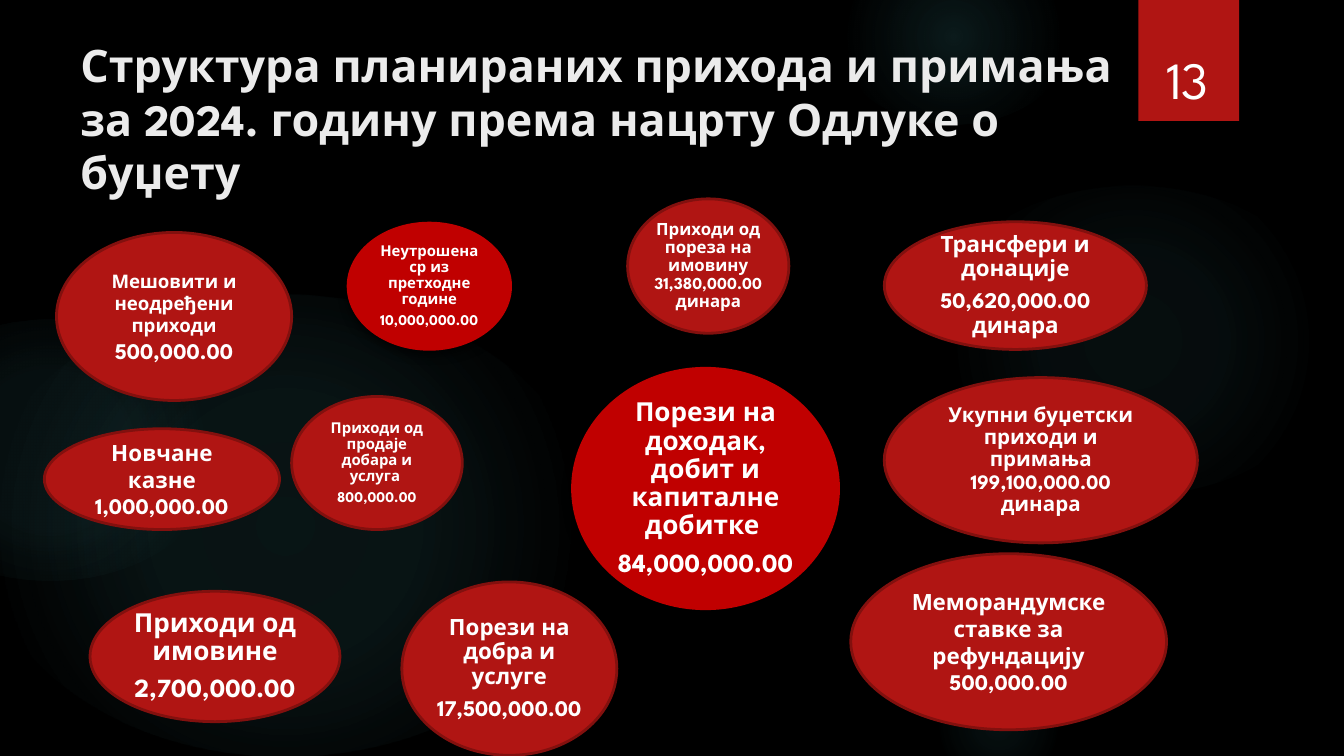
from pptx import Presentation
from pptx.dml.color import RGBColor
from pptx.enum import shapes, text
from pptx.oxml import parse_xml
from pptx.oxml.ns import nsdecls
from pptx.util import Inches, Pt

FONT = "League Spartan"
BLACK = RGBColor(0x00, 0x00, 0x00)
WHITE = RGBColor(0xFF, 0xFF, 0xFF)
PALE = RGBColor(0xEB, 0xEB, 0xEB)
RED = RGBColor(0xB0, 0x15, 0x13)
BRIGHT = RGBColor(0xC0, 0x00, 0x00)
DARK = RGBColor(0x82, 0x10, 0x0E)
TEAL = RGBColor(0x50, 0xB9, 0xC1)

GLOWS = [
    ((6.89, 1.38, 3.08, 2.31), ((0, 7), (36, 6), (69, 0))),
    ((6.22, -0.38, 1.75, 1.31), ((0, 14), (36, 7), (73, 0))),
    ((6.89, 5, 1.08, 0.81), ((0, 9), (36, 5), (66, 0))),
    ((-0.17, 2.19, 4.58, 3.44), ((0, 11), (36, 10), (75, 0))),
    ((-0.92, 2.38, 2.58, 1.94), ((0, 8), (36, 8), (72, 0))),
]

TIGHT = [
    ((6.58, 2.81, 2.33, 1.23), 11, RED,
     ["Укупни буџетски приходи и примања 199,100,000.00 динара"]),
    ((4.67, 1.48, 1.2, 1), 9, RED,
     ["Приходи од пореза на имовину 31,380,000.00 динара"]),
    ((6.58, 1.65, 1.95, 0.95), 12, RED,
     ["Трансфери и донације", "50,620,000.00 динара"]),
    ((2.99, 4.33, 1.6, 1.29), 12, RED,
     ["Порези на добра и услуге", "17,500,000.00"]),
    ((2.17, 2.95, 1.27, 0.99), 8, RED,
     ["Приходи од продаје добара и услуга ", "800,000.00"]),
    ((0.67, 4.4, 1.86, 0.97), 14, RED,
     ["Приходи од имовине", "2,700,000.00"]),
    ((4.25, 2.73, 2, 1.81), 14, BRIGHT,
     ["Порези на доходак, добит и капиталне добитке ", "84,000,000.00"]),
    ((2.58, 1.65, 1.23, 0.96), 8, BRIGHT,
     ["Неутрошена ср из претходне године", "10,000,000.00"]),
]

LOOSE = [
    ((6.33, 4.12, 2.35, 1.31), 12,
     ["Меморандумске\vставке за рефундацију 500,000.00"]),
    ((0.33, 3.19, 1.75, 0.75), 12, ["Новчане казне", "1,000,000.00"]),
    ((0.42, 1.73, 1.75, 1.25), 10, ["Мешовити и неодређени приходи "]),
]


def style(run, size, color=WHITE, bold=True):
    """Set the font of a run."""
    run.font.name, run.font.size, run.font.bold = FONT, Pt(size), bold
    run.font.color.rgb = color


def solid(slide, kind, box, fill, line=None):
    """Add a filled shape without a shadow."""
    shape = slide.shapes.add_shape(kind, *map(Inches, box))
    shape.shadow.inherit = False
    shape.fill.solid()
    shape.fill.fore_color.rgb = fill
    if line is None:
        shape.line.fill.background()
    else:
        shape.line.color.rgb = line
        shape.line.width = Pt(1.5)
    return shape


def shade(shape, alpha, blur, dist):
    """Cast a soft black shadow below a shape."""
    effects = shape._element.spPr.find("{*}effectLst")
    effects.append(parse_xml(
        f'<a:outerShdw {nsdecls("a")} blurRad="{Pt(blur)}" dist="{Pt(dist)}" '
        f'dir="5400000" rotWithShape="0"><a:srgbClr val="{BLACK}">'
        f'<a:alpha val="{alpha * 1000}"/></a:srgbClr></a:outerShdw>'))


def glow(slide, box, stops):
    """Add an ellipse that fades out from its centre."""
    shape = solid(slide, shapes.MSO_SHAPE.OVAL, box, TEAL)
    marks = "".join(
        f'<a:gs pos="{pos * 1000}"><a:srgbClr val="{TEAL}">'
        f'<a:alpha val="{alpha * 1000}"/></a:srgbClr></a:gs>'
        for pos, alpha in stops)
    fade = parse_xml(
        f'<a:gradFill {nsdecls("a")} rotWithShape="1"><a:gsLst>{marks}</a:gsLst>'
        '<a:path path="circle"><a:fillToRect l="50000" t="50000" r="50000" '
        'b="50000"/></a:path></a:gradFill>')
    props = shape._element.spPr
    props.replace(props.find("{*}solidFill"), fade)


def label(slide, box, words, size, color, bold):
    """Add a wrapped text box."""
    frame = slide.shapes.add_textbox(*map(Inches, box)).text_frame
    frame.word_wrap = True
    frame.text = words
    for run in frame.paragraphs[0].runs:
        style(run, size, color, bold)
    return frame


def header(slide):
    """Place the title and the page tab."""
    tab = solid(slide, shapes.MSO_SHAPE.RECTANGLE, (8.47, 0, 0.75, 0.9), RED)
    shade(tab, 45, 3, 2)
    label(slide, (0.5, 0.23, 9, 0.64),
          "Структура планираних прихода и примања\v"
          "за 2024. годину према нацрту Одлуке о\vбуџету", 24, PALE, True)
    page = label(slide, (8.49, 0.24, 0.69, 0.63), "13", 28, WHITE, False)
    page.vertical_anchor = text.MSO_ANCHOR.BOTTOM
    page.paragraphs[0].alignment = text.PP_ALIGN.CENTER


def bubble(slide, box, size, lines, fill=RED, tight=False):
    """Add an ellipse with centred text."""
    shape = solid(slide, shapes.MSO_SHAPE.OVAL, box, fill,
                  DARK if fill == RED else None)
    if fill == BRIGHT:
        shade(shape, 60, 5, 3)
    frame = shape.text_frame
    frame.word_wrap = True
    frame.vertical_anchor = text.MSO_ANCHOR.MIDDLE
    frame.text = "\n".join(lines)
    if tight:
        gap = Inches(0.02 if size > 9 else 0.01)
        frame.margin_left = frame.margin_right = gap
        frame.margin_top = frame.margin_bottom = gap
    for para in frame.paragraphs:
        para.alignment = text.PP_ALIGN.CENTER
        if tight:
            para.line_spacing = 0.9
            para.space_after = Pt(round(size * 0.35, 1))
        for run in para.runs:
            style(run, size)
    return frame


def main():
    """Build the budget revenue slide."""
    deck = Presentation()
    deck.slide_width = Inches(10)
    deck.slide_height = deck.slide_width * 9 // 16
    slide = deck.slides.add_slide(deck.slide_layouts[6])
    slide.background.fill.solid()
    slide.background.fill.fore_color.rgb = BLACK
    for box, stops in GLOWS:
        glow(slide, box, stops)
    header(slide)
    for box, size, fill, lines in TIGHT:
        bubble(slide, box, size, lines, fill, True)
    for box, size, lines in LOOSE:
        frame = bubble(slide, box, size, lines)
    total = frame.paragraphs[0].add_run()
    total.text = "500,000.00"
    style(total, 12)
    deck.save("out.pptx")


if __name__ == "__main__":
    main()
